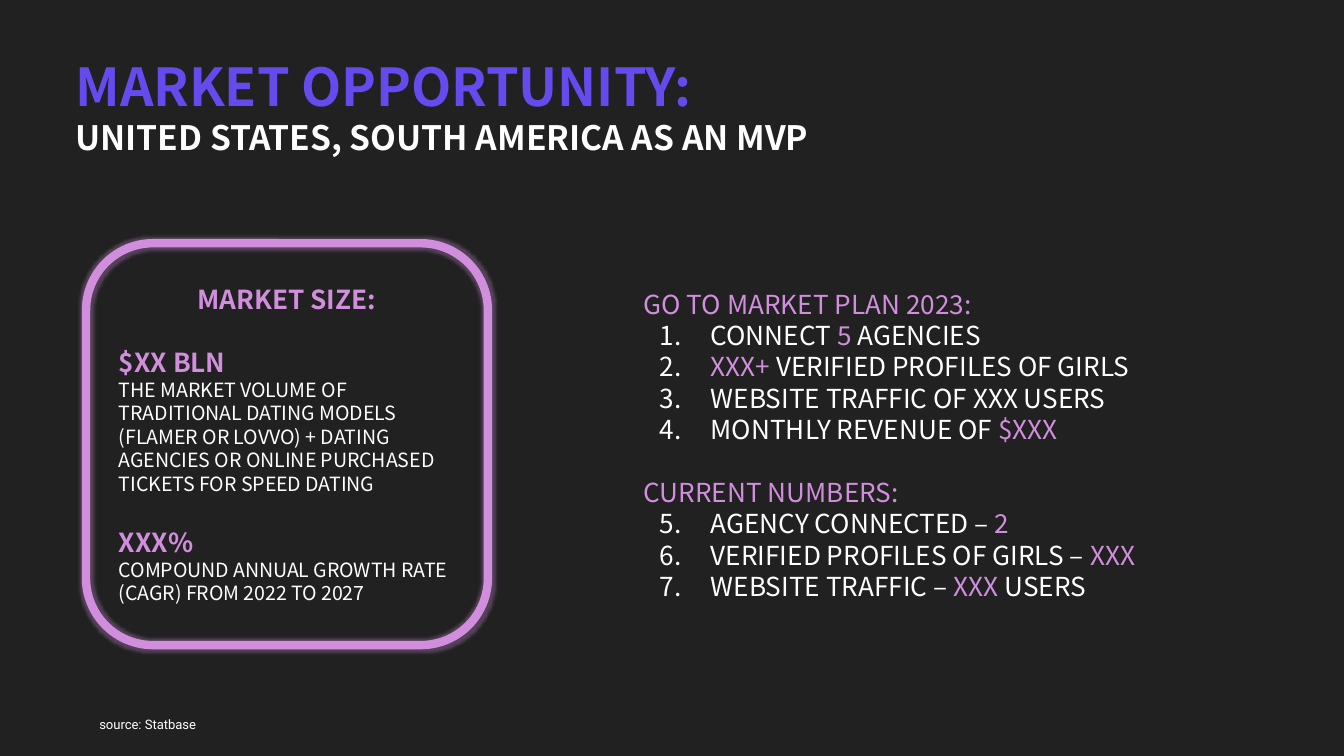
"""Build the market opportunity slide."""
from dataclasses import dataclass

from lxml.etree import SubElement
from pptx import Presentation
from pptx.dml.color import RGBColor
from pptx.enum.shapes import MSO_SHAPE
from pptx.enum.text import MSO_ANCHOR, MSO_AUTO_SIZE, PP_ALIGN
from pptx.oxml.ns import qn
from pptx.util import Inches, Pt

DARK = RGBColor(0x21, 0x21, 0x21)
WHITE = RGBColor(0xFF, 0xFF, 0xFF)
PINK = RGBColor(0xD1, 0x8E, 0xDD)
VIOLET = RGBColor(0x65, 0x4A, 0xED)
HEADING_FONT = "Noto Sans CJK SC"
SMALL_FONT = "Roboto"
GAP = 16.8


@dataclass
class Span:
    text: str
    color: RGBColor = WHITE


@dataclass
class Para:
    spans: list[Span]
    size: float = 14
    bold: bool = False
    font: str = HEADING_FONT
    align: PP_ALIGN = PP_ALIGN.LEFT
    before: float = 0
    number_from: int = 0


@dataclass
class Area:
    left: float
    top: float
    width: float
    height: float


def heading(text: str, color: RGBColor = PINK, **style) -> Para:
    return Para([Span(text, color)], **style)


def numbered(items: list[list[Span]], first: int) -> list[Para]:
    return [Para(spans, number_from=first) for spans in items]


def add_number(para, first: int) -> None:
    properties = para._p.get_or_add_pPr()
    properties.set("marL", str(Inches(0.5)))
    properties.set("indent", str(-Inches(0.38)))
    color = SubElement(SubElement(properties, qn("a:buClr")), qn("a:srgbClr"))
    color.set("val", str(WHITE))
    number = SubElement(properties, qn("a:buAutoNum"))
    number.set("type", "arabicPeriod")
    number.set("startAt", str(first))


def write(box, paras: list[Para], grow: bool = True, inset: float = 0.1,
          anchor: MSO_ANCHOR = MSO_ANCHOR.MIDDLE) -> None:
    frame = box.text_frame
    layout = {
        "word_wrap": True, "vertical_anchor": anchor,
        "auto_size": MSO_AUTO_SIZE.SHAPE_TO_FIT_TEXT if grow else MSO_AUTO_SIZE.NONE,
        "margin_left": Inches(0.1), "margin_right": Inches(0.1),
        "margin_top": Inches(inset), "margin_bottom": Inches(inset),
    }
    for name, value in layout.items():
        setattr(frame, name, value)
    for index, item in enumerate(paras):
        para = frame.add_paragraph() if index else frame.paragraphs[0]
        para.alignment = item.align
        para.space_before = Pt(item.before)
        if item.number_from:
            add_number(para, item.number_from)
        for span in item.spans:
            run = para.add_run()
            run.text = span.text
            style = {"name": item.font, "size": Pt(item.size), "bold": item.bold}
            for name, value in style.items():
                setattr(run.font, name, value)
            run.font.color.rgb = span.color


def lengths(area: Area) -> list[Inches]:
    return [Inches(v) for v in (area.left, area.top, area.width, area.height)]


def add_rounded(page, area: Area):
    box = page.shapes.add_shape(MSO_SHAPE.ROUNDED_RECTANGLE, *lengths(area))
    box.shadow.inherit = False
    box.fill.background()
    box.line.fill.background()
    return box


def add_glowing_card(page, area: Area):
    card = add_rounded(page, area)
    card.line.color.rgb = PINK
    card.line.width = Pt(4.5)
    effects = card._element.spPr.find(qn("a:effectLst"))
    glow = SubElement(effects, qn("a:glow"), rad=str(Pt(3)))
    color = SubElement(glow, qn("a:srgbClr"), val=str(PINK))
    SubElement(color, qn("a:alpha"), val="30000")
    return card


def main() -> None:
    deck = Presentation()
    deck.slide_width = Inches(10)
    deck.slide_height = deck.slide_width * 9 // 16
    page = deck.slides.add_slide(deck.slide_layouts[6])
    page.background.fill.solid()
    page.background.fill.fore_color.rgb = DARK

    plan = numbered([
        [Span("CONNECT"), Span(" 5 ", PINK), Span("AGENCIES")],
        [Span("XXX+ ", PINK), Span("VERIFIED PROFILES OF GIRLS")],
        [Span("WEBSITE TRAFFIC OF XXX USERS")],
        [Span("MONTHLY REVENUE OF "), Span("$XXX", PINK)],
    ], 1)
    current = numbered([
        [Span("AGENCY CONNECTED –"), Span(" 2", PINK)],
        [Span("VERIFIED PROFILES OF GIRLS – "), Span("XXX", PINK)],
        [Span("WEBSITE TRAFFIC – "), Span("XXX ", PINK), Span("USERS")],
    ], 5)
    goals = page.shapes.add_textbox(*lengths(Area(4.69, 2.03, 5.03, 2.56)))
    write(goals, [heading("GO TO MARKET PLAN 2023:"), *plan,
                  heading("CURRENT NUMBERS:", before=GAP), *current])

    title = add_rounded(page, Area(0.41, 0.23, 9.15, 1.12))
    write(title, [
        heading("MARKET OPPORTUNITY:", VIOLET, size=28, bold=True),
        heading("UNITED STATES, SOUTH AMERICA AS AN MVP", WHITE, size=18, bold=True),
    ])

    card = add_glowing_card(page, Area(0.64, 1.81, 2.99, 2.99))
    write(card, [
        heading("MARKET SIZE:", bold=True, align=PP_ALIGN.CENTER),
        heading("$XX BLN", bold=True, before=GAP),
        heading("THE MARKET VOLUME OF TRADITIONAL DATING MODELS (FLAMER OR LOVVO) "
                "+ DATING AGENCIES OR ONLINE PURCHASED TICKETS FOR SPEED DATING",
                WHITE, size=10.5),
        heading("XXX%", bold=True, before=GAP),
        heading("COMPOUND ANNUAL GROWTH RATE (CAGR) FROM 2022 TO 2027", WHITE, size=10.5),
    ], grow=False)

    source = page.shapes.add_textbox(*lengths(Area(0.64, 5.28, 2.39, 0.22)))
    write(source, [heading("source: Statbase", WHITE, size=7, font=SMALL_FONT)],
          inset=0.05, anchor=MSO_ANCHOR.TOP)
    deck.save("out.pptx")


if __name__ == "__main__":
    main()
